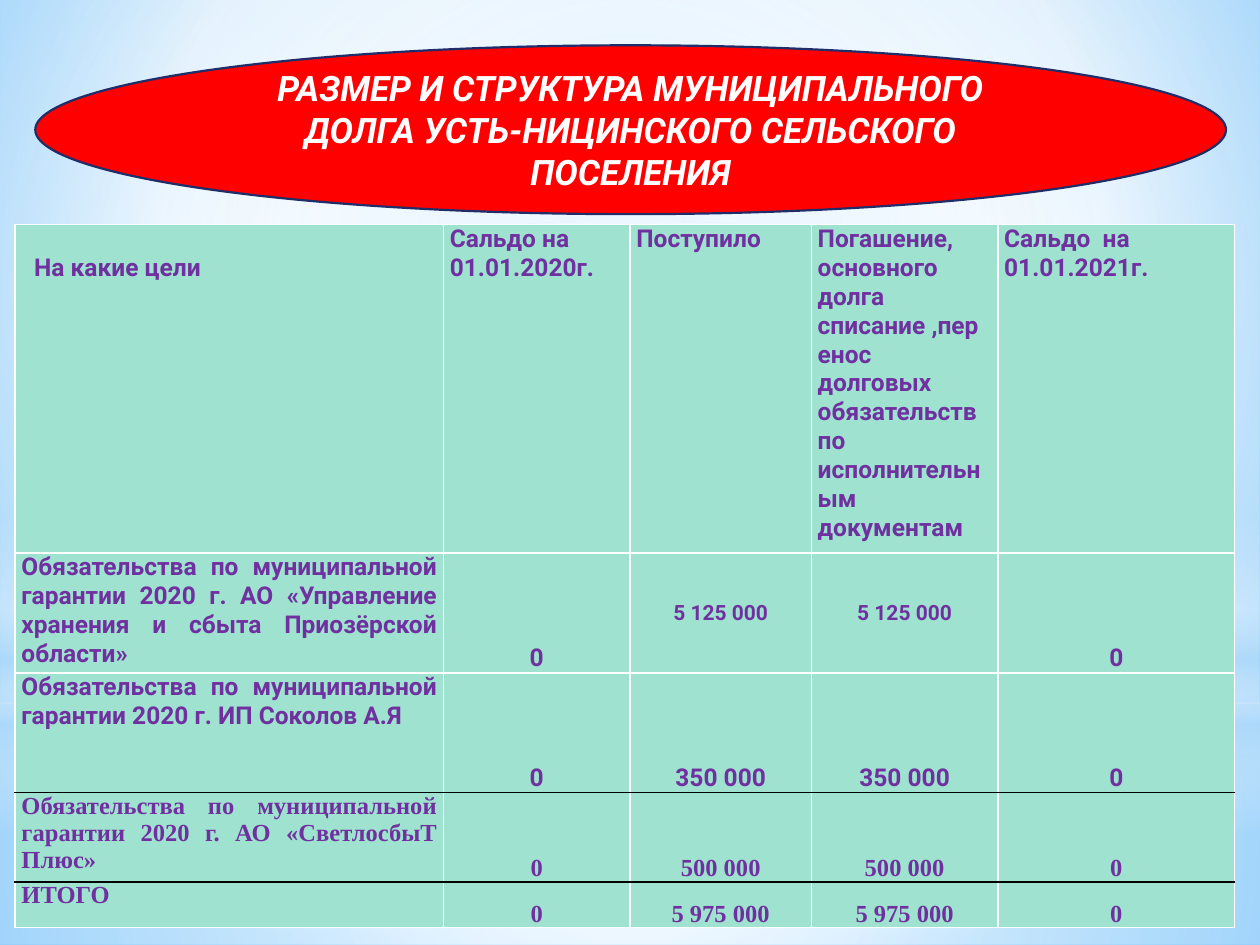
from lxml import etree
from pptx import Presentation
from pptx import util as u
from pptx.dml.color import RGBColor
from pptx.enum import shapes, text
from pptx.oxml import parse_xml
from pptx.oxml.ns import nsdecls, qn

WHITE, BLACK, MINT, PURPLE = "FFFFFF", "000000", "9EE2CF", "7030A0"
SANS, SERIF = "Roboto", "Times New Roman"
LEFT, CENTER, JUSTIFY = text.PP_ALIGN.LEFT, text.PP_ALIGN.CENTER, text.PP_ALIGN.JUSTIFY
TOP, MIDDLE, BOTTOM = text.MSO_ANCHOR.TOP, text.MSO_ANCHOR.MIDDLE, text.MSO_ANCHOR.BOTTOM


def color(hex_value):
    return RGBColor.from_string(hex_value)


def set_gradient(parent, stops, circle=None, angle=90):
    """Replace the solid fill of parent with stops of (position, colour, opacity)."""
    fill = parse_xml(f'<a:gradFill {nsdecls("a")} rotWithShape="1"><a:gsLst/></a:gradFill>')
    for position, hex_value, opacity in stops:
        stop = etree.SubElement(fill[0], qn("a:gs"), pos=str(position * 1000))
        tone = etree.SubElement(stop, qn("a:srgbClr"), val=hex_value)
        if opacity < 100:
            etree.SubElement(tone, qn("a:alpha"), val=str(opacity * 1000))
    if circle:
        way = etree.SubElement(fill, qn("a:path"))
        way.set("path", "circle")
        sides = {side: str(value * 1000) for side, value in zip("ltrb", circle)}
        etree.SubElement(way, qn("a:fillToRect"), sides)
    else:
        etree.SubElement(fill, qn("a:lin"), ang=str(angle * 60000), scaled="0")
    parent.replace(parent.find(qn("a:solidFill")), fill)


def add_plain_shape(page, kind, box, fill):
    shape = page.shapes.add_shape(kind, *map(u.Inches, box))
    shape.shadow.inherit = False
    shape.fill.solid()
    shape.fill.fore_color.rgb = color(fill)
    shape.line.fill.background()
    return shape


def add_span(para, words, size, font, hex_value, italic=False):
    span = para.add_run()
    span.text = words
    span.font.size = u.Pt(size)
    span.font.name = font
    span.font.bold = True
    span.font.italic = italic
    span.font.color.rgb = color(hex_value)


def add_backdrop(page, width, height):
    page.background.fill.solid()
    page.background.fill.fore_color.rgb = color(WHITE)
    set_gradient(page.element.find(".//" + qn("p:bgPr")),
                 [(0, "9ED5FF", 100), (60, WHITE, 100), (100, "5BB9FF", 100)],
                 (20, 10, 20, 60))
    center, sky, horizon = (50, 50, 50, 50), "B4DCFA", 5.58
    rect, oval = shapes.MSO_SHAPE.RECTANGLE, shapes.MSO_SHAPE.OVAL
    layers = [
        (rect, (0, horizon, width, height - horizon),
         [(0, WHITE, 91), (37, WHITE, 76), (100, sky, 79)], center),
        (rect, (0, 0, width, horizon),
         [(0, WHITE, 89), (48, WHITE, 62), (100, sky, 79)], center),
        (rect, (0, 4.12, width, 2.5),
         [(0, WHITE, 0), (29, WHITE, 30), (45, sky, 40), (55, WHITE, 26),
          (65, sky, 60), (100, WHITE, 0)], None),
        (oval, (0, 1.75, width, 5.58), [(0, WHITE, 100), (56, WHITE, 0)], center),
    ]
    for kind, box, stops, circle in layers:
        shape = add_plain_shape(page, kind, box, WHITE)
        set_gradient(shape.element.spPr, stops, circle)


def set_borders(cell, top, bottom):
    edges = {"lnL": WHITE, "lnR": WHITE, "lnT": top, "lnB": bottom}
    for index, (edge, hex_value) in enumerate(edges.items()):
        line = parse_xml(f'<a:{edge} {nsdecls("a")} w="12700"><a:solidFill>'
                         f'<a:srgbClr val="{hex_value}"/></a:solidFill></a:{edge}>')
        cell._tc.get_or_add_tcPr().insert(index, line)


def fill_cell(cell, lines, size, font, align, anchor):
    cell.margin_left = cell.margin_right = u.Inches(0.05)
    cell.margin_top = cell.margin_bottom = 0
    cell.vertical_anchor = anchor
    cell.fill.solid()
    cell.fill.fore_color.rgb = color(MINT)
    frame = cell.text_frame
    for index, words in enumerate(lines):
        para = frame.add_paragraph() if index else frame.paragraphs[0]
        para.alignment = align
        add_span(para, words, size, font, PURPLE)


def add_debt_table(page, box):
    headers = [
        ["На какие цели"],
        ["Сальдо на", "01.01.2020г."],
        ["Поступило"],
        ["Погашение, основного долга списание ,перенос долговых обязательств "
         "по исполнительным документам"],
        ["Сальдо  на", "01.01.2021г."],
    ]
    duty = "Обязательства по муниципальной гарантии 2020 г. "
    # Purpose, amount received and repaid, font, bottom border
    debts = [
        (duty + "АО «Управление хранения и сбыта Приозёрской области»", "5 125 000", SANS, WHITE),
        (duty + "ИП Соколов А.Я", "350 000", SANS, BLACK),
        (duty + "АО «СветлосбыТ Плюс»", "500 000", SERIF, BLACK),
        ("ИТОГО", "5 975 000", SERIF, WHITE),
    ]
    widths = [3.4, 1.48, 1.44, 1.48, 1.88]
    heights = [2.61, 0.95, 0.95, 0.71, 0.36]
    table = page.shapes.add_table(len(heights), len(widths), *map(u.Inches, box)).table
    table.first_row = table.horz_banding = False
    for column, width in zip(table.columns, widths):
        column.width = u.Inches(width)
    for row, height in zip(table.rows, heights):
        row.height = u.Inches(height)

    # Header row
    for index, lines in enumerate(headers):
        cell = table.cell(0, index)
        fill_cell(cell, lines, 14, SANS, LEFT if index in (2, 3) else JUSTIFY, TOP)
        set_borders(cell, WHITE, WHITE)
    table.cell(0, 0).margin_top = u.Inches(0.23)
    table.cell(0, 0).margin_left = u.Inches(0.15)

    # Debt rows
    top = WHITE
    for row, (purpose, amount, font, bottom) in enumerate(debts, 1):
        for column, words in enumerate([purpose, "0", amount, amount, "0"]):
            cell = table.cell(row, column)
            small = row == 1 and words == amount
            anchor = MIDDLE if small else BOTTOM if column else TOP
            fill_cell(cell, [words], 12 if small else 14, font,
                      CENTER if column else JUSTIFY, anchor)
            set_borders(cell, top, bottom)
        top = bottom


def add_title(page, box):
    oval = add_plain_shape(page, shapes.MSO_SHAPE.OVAL, box, "FF0000")
    oval.line.color.rgb = color("1F2E69")
    oval.line.width = u.Pt(1.25)
    frame = oval.text_frame
    frame.word_wrap = True
    frame.vertical_anchor = MIDDLE
    para = frame.paragraphs[0]
    para.alignment = CENTER
    add_span(para, "РАЗМЕР И СТРУКТУРА МУНИЦИПАЛЬНОГО ДОЛГА УСТЬ-НИЦИНСКОГО "
             "СЕЛЬСКОГО ПОСЕЛЕНИЯ", 20, SANS, WHITE, italic=True)


def main():
    deck = Presentation()
    deck.slide_width, deck.slide_height = u.Inches(10), u.Inches(7.5)
    page = deck.slides.add_slide(deck.slide_layouts[6])
    add_backdrop(page, 10, 7.5)
    add_debt_table(page, (0.12, 1.78, 9.69, 5.59))
    add_title(page, (0.28, 0.36, 9.45, 1.34))
    deck.save("out.pptx")


if __name__ == "__main__":
    main()
